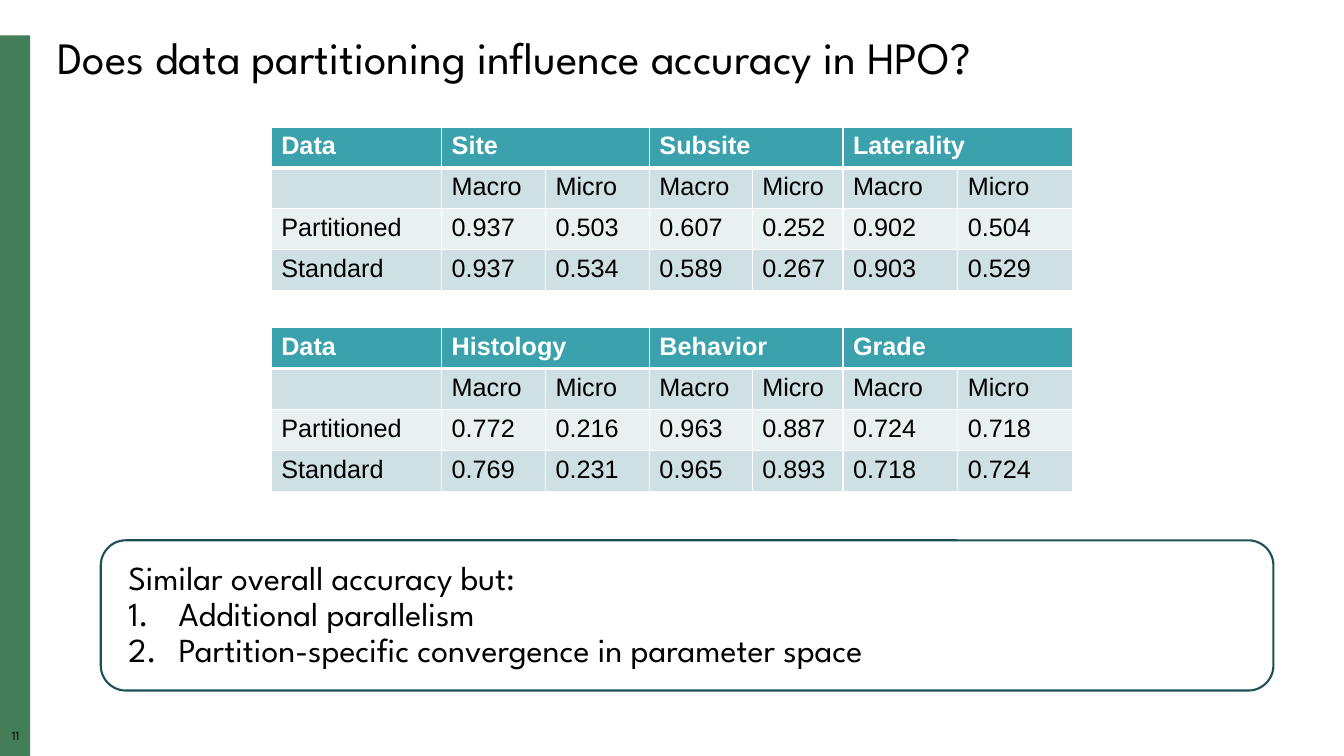
from lxml.etree import SubElement
from pptx import Presentation
from pptx.dml.color import RGBColor
from pptx.enum.shapes import MSO_SHAPE as Preset
from pptx.enum.text import MSO_ANCHOR as Anchor, MSO_AUTO_SIZE as AutoSize, PP_ALIGN as Align
from pptx.oxml.ns import qn
from pptx.util import Inches, Pt

SLIDE_WIDTH, SLIDE_HEIGHT = Inches(13.33), Inches(7.5)

BLACK = RGBColor(0x00, 0x00, 0x00)
WHITE = RGBColor(0xFF, 0xFF, 0xFF)
GREEN = RGBColor(0x44, 0x7E, 0x59)
TEAL = RGBColor(0x3B, 0xA2, 0xAD)
DARK_TEAL = RGBColor(0x1D, 0x51, 0x57)
BAND_DARK = RGBColor(0xCE, 0xE0, 0xE3)
BAND_LIGHT = RGBColor(0xE8, 0xF0, 0xF1)

HEADING_FONT, TABLE_FONT = "League Spartan", "Arial"

# Table geometry, in percent of the slide's width and height
TABLE_LEFT = 20.18
COLUMN_WIDTHS = [12.68, 7.73, 7.73, 7.65, 6.75, 8.55, 8.55]
ROW_HEIGHT = 5.42

SCORES = [
    (16.8, ["Site", "Subsite", "Laterality"], {
        "Partitioned": ["0.937", "0.503", "0.607", "0.252", "0.902", "0.504"],
        "Standard": ["0.937", "0.534", "0.589", "0.267", "0.903", "0.529"],
    }),
    (43.33, ["Histology", "Behavior", "Grade"], {
        "Partitioned": ["0.772", "0.216", "0.963", "0.887", "0.724", "0.718"],
        "Standard": ["0.769", "0.231", "0.965", "0.893", "0.718", "0.724"],
    }),
]


def across(percent):
    return round(SLIDE_WIDTH * percent / 100)


def down(percent):
    return round(SLIDE_HEIGHT * percent / 100)


def area(left, top, width, height):
    """Turn percentages of the slide into a position and size."""
    return across(left), down(top), across(width), down(height)


def format_runs(paragraph, font_name, size, color=BLACK, bold=False):
    for run in paragraph.runs:
        font = run.font
        font.name, font.size, font.bold = font_name, Pt(size), bold
        font.color.rgb = color


def set_insets(text_frame, inset):
    text_frame.margin_left = text_frame.margin_right = inset
    text_frame.margin_top = text_frame.margin_bottom = inset


def add_title(slide, text):
    title = slide.shapes.title
    title.left, title.top, title.width, title.height = area(3.53, 4, 93.77, 7.87)
    title.text_frame.text = text
    title.text_frame.vertical_anchor = Anchor.MIDDLE
    title.text_frame.auto_size = AutoSize.SHAPE_TO_FIT_TEXT
    paragraph = title.text_frame.paragraphs[0]
    paragraph.alignment, paragraph.line_spacing = Align.LEFT, 0.9
    format_runs(paragraph, HEADING_FONT, 32)


def add_side_bar(slide):
    bar = slide.shapes.add_shape(Preset.RECTANGLE, *area(0, 4.67, 2.25, 95.33))
    bar.shadow.inherit = False
    bar.fill.solid()
    bar.fill.fore_color.rgb = GREEN
    bar.line.fill.background()


def add_page_number(slide, number):
    text_frame = slide.shapes.add_textbox(*area(0, 96.53, 2.33, 2.27)).text_frame
    set_insets(text_frame, 0)
    text_frame.word_wrap = True
    text_frame.text = number
    paragraph = text_frame.paragraphs[0]
    paragraph.alignment, paragraph.line_spacing = Align.CENTER, 0.9
    format_runs(paragraph, HEADING_FONT, 9)


def add_border(cell, side, width):
    line = SubElement(cell._tc.get_or_add_tcPr(), qn(f"a:ln{side}"), w=str(Pt(width)))
    fill = SubElement(line, qn("a:solidFill"))
    SubElement(fill, qn("a:srgbClr"), val=str(WHITE))


def format_cell(cell, row):
    is_header = row == 0
    for side in "LRTB":
        is_rule = (row, side) in [(0, "B"), (1, "T")]
        add_border(cell, side, 3 if is_rule else 1)
    cell.fill.solid()
    band = BAND_DARK if row % 2 else BAND_LIGHT
    cell.fill.fore_color.rgb = TEAL if is_header else band
    format_runs(cell.text_frame.paragraphs[0], TABLE_FONT, 18,
                WHITE if is_header else BLACK, is_header)


def add_score_table(slide, top, tasks, scores):
    """Add a table with a macro and a micro column for each task."""
    header = ["Data"] + [text for task in tasks for text in (task, "")]
    rows = [header, [""] + ["Macro", "Micro"] * len(tasks)]
    rows += [[name, *values] for name, values in scores.items()]
    frame = slide.shapes.add_table(
        len(rows), len(header),
        *area(TABLE_LEFT, top, sum(COLUMN_WIDTHS), ROW_HEIGHT * len(rows)))
    table = frame.table
    for column, width in zip(table.columns, COLUMN_WIDTHS):
        column.width = across(width)
    for row, texts in enumerate(rows):
        table.rows[row].height = down(ROW_HEIGHT)
        for column, text in enumerate(texts):
            cell = table.cell(row, column)
            if text:
                cell.text_frame.text = text
            format_cell(cell, row)
    for column in range(1, len(header), 2):
        table.cell(0, column).merge(table.cell(0, column + 1))


def number_paragraph(paragraph):
    properties = paragraph._p.get_or_add_pPr()
    properties.set("marL", str(Inches(0.5)))
    properties.set("indent", str(Inches(-0.5)))
    SubElement(properties, qn("a:buFont"), typeface="+mj-lt")
    SubElement(properties, qn("a:buAutoNum"), type="arabicPeriod")


def add_summary(slide, lead, points):
    box = slide.shapes.add_shape(Preset.ROUNDED_RECTANGLE, *area(7.5, 71.47, 87.25, 19.87))
    box.shadow.inherit = False
    box.fill.solid()
    box.fill.fore_color.rgb = WHITE
    box.line.color.rgb, box.line.width = DARK_TEAL, Pt(1.5)
    text_frame = box.text_frame
    set_insets(text_frame, Inches(0.2))
    text_frame.word_wrap = True
    text_frame.vertical_anchor = Anchor.MIDDLE
    text_frame.text = "\n".join([lead, *points])
    for index, paragraph in enumerate(text_frame.paragraphs):
        if index:
            number_paragraph(paragraph)
        paragraph.alignment, paragraph.line_spacing = Align.LEFT, 0.9
        format_runs(paragraph, HEADING_FONT, 24)


def main():
    presentation = Presentation()
    presentation.slide_width, presentation.slide_height = SLIDE_WIDTH, SLIDE_HEIGHT
    title_only = presentation.slide_layouts.get_by_name("Title Only")
    slide = presentation.slides.add_slide(title_only)
    add_side_bar(slide)
    add_page_number(slide, "11")
    add_title(slide, "Does data partitioning influence accuracy in HPO?")
    for top, tasks, scores in SCORES:
        add_score_table(slide, top, tasks, scores)
    add_summary(slide, "Similar overall accuracy but:", [
        "Additional parallelism",
        "Partition-specific convergence in parameter space",
    ])
    presentation.save("out.pptx")


if __name__ == "__main__":
    main()
